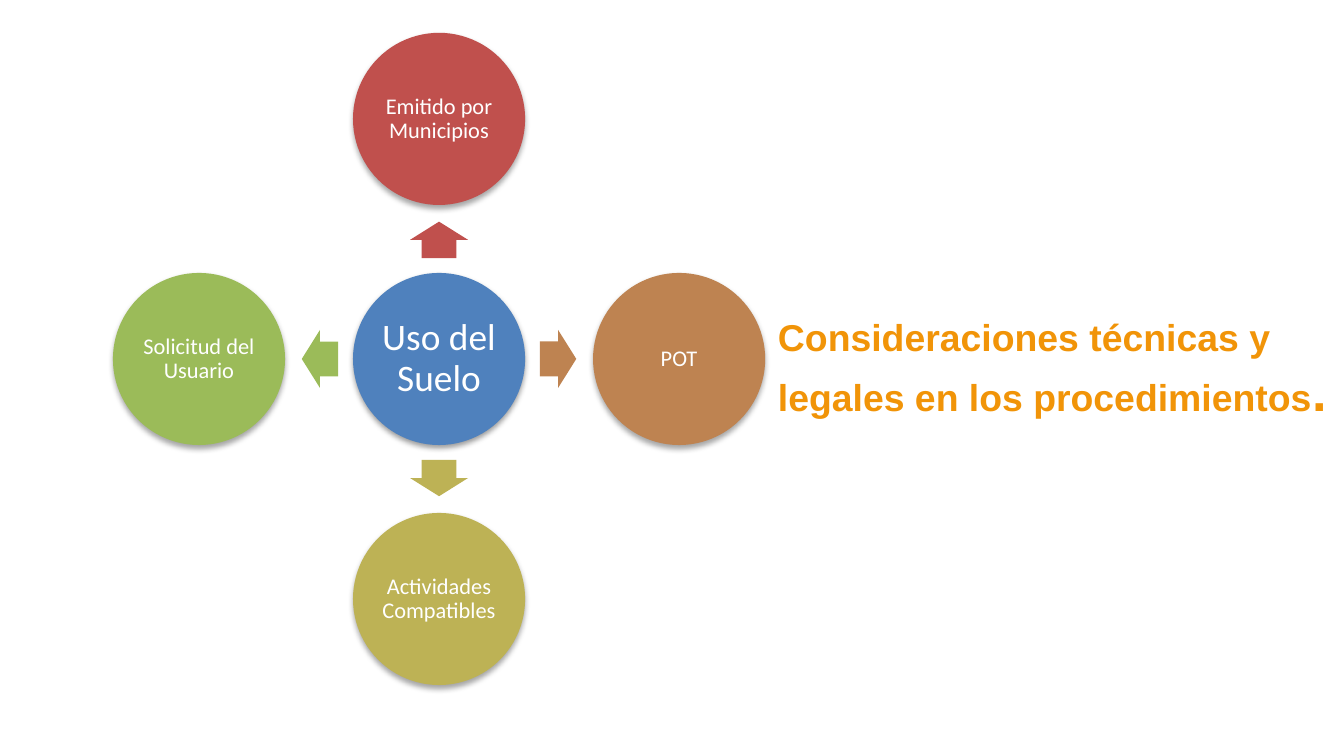
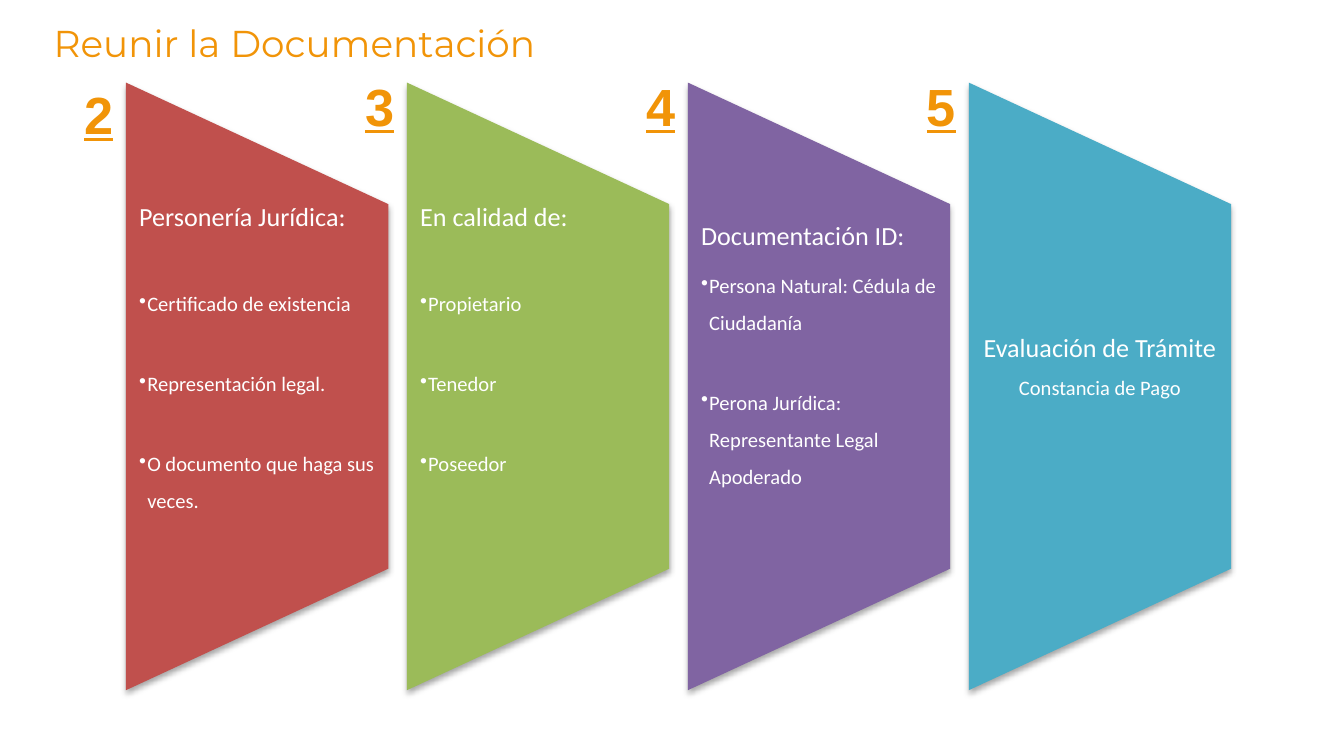
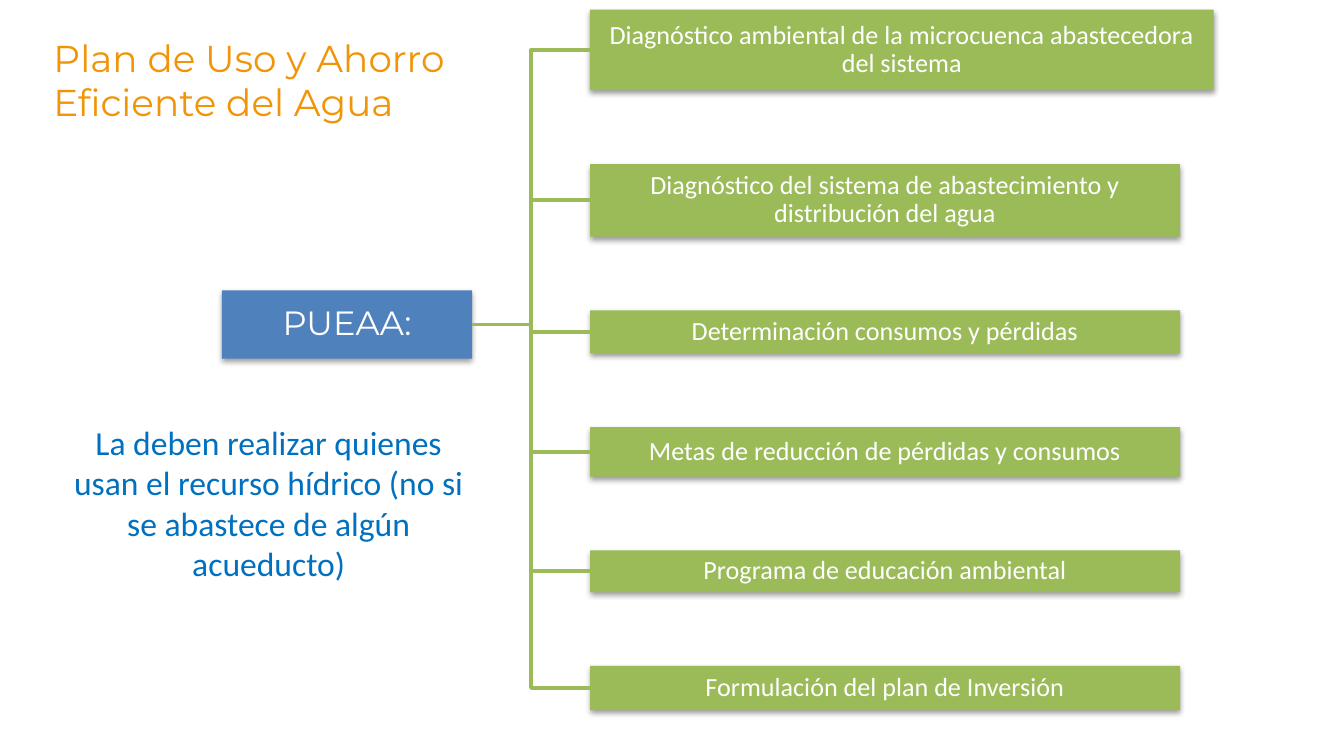
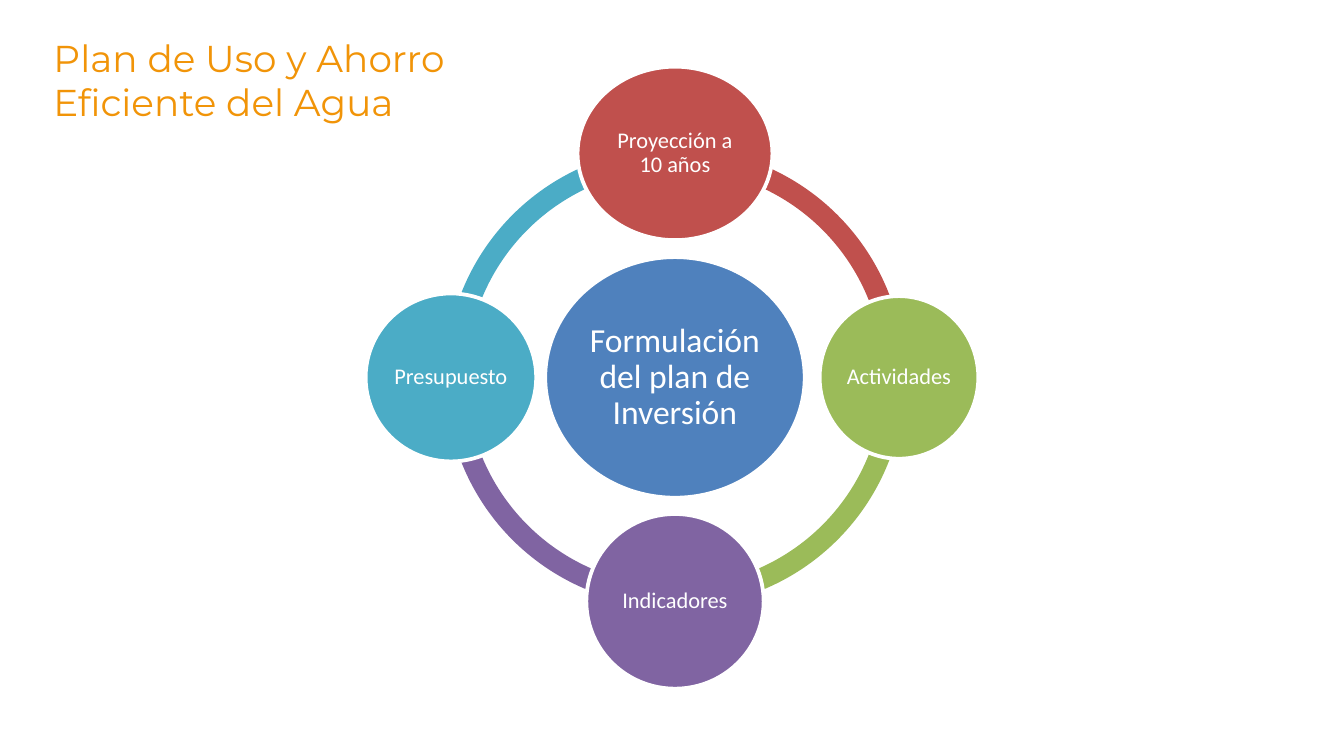
from dataclasses import dataclass
from typing import Any, NamedTuple, Optional

import lxml.etree
import pptx
import pptx.dml.color
import pptx.enum.shapes
import pptx.enum.text
import pptx.oxml.ns
import pptx.util

Pt = pptx.util.Pt
RGB = pptx.dml.color.RGBColor
MSO = pptx.enum.shapes.MSO_SHAPE
ALIGN = pptx.enum.text.PP_ALIGN
ANCHOR = pptx.enum.text.MSO_ANCHOR
qn = pptx.oxml.ns.qn

# Shared colours and fonts
WHITE = RGB(0xFF, 0xFF, 0xFF)
ORANGE = RGB(0xF1, 0x94, 0x08)
BLUE = RGB(0x4F, 0x81, 0xBD)
RED = RGB(0xC0, 0x50, 0x4D)
GREEN = RGB(0x9B, 0xBB, 0x59)
PURPLE = RGB(0x80, 0x64, 0xA2)
AQUA = RGB(0x4B, 0xAC, 0xC6)
BROWN = RGB(0xBE, 0x83, 0x51)
OLIVE = RGB(0xBD, 0xB2, 0x55)
NOTE_BLUE = RGB(0x00, 0x70, 0xC0)
BODY, HEADING, NUMBER = "Calibri", "Montserrat", "Arial"
PLAN_TITLE = "Plan de Uso y Ahorro Eficiente del Agua"


class Box(NamedTuple):
    x: float
    y: float
    w: float
    h: float


class Shadow(NamedTuple):
    alpha: int
    dist: float


class Direction(NamedTuple):
    dx: int
    dy: int
    angle: int


UP, RIGHT = Direction(0, -1, 270), Direction(1, 0, 0)
DOWN, LEFT = Direction(0, 1, 90), Direction(-1, 0, 180)
SOFT, DEEP = Shadow(38, 1.6), Shadow(35, 1.8)


@dataclass
class Run:
    text: str
    size: float
    color: RGB = WHITE
    font: str = BODY
    bold: bool = False
    underline: bool = False


@dataclass
class Para:
    runs: list[Run]
    align: Any = ALIGN.LEFT
    spacing: float = 1.0
    before: float = 0
    bullet: bool = False


@dataclass
class Satellite:
    text: str
    color: RGB
    way: Direction
    w: float
    h: float


@dataclass
class Panel:
    number: str
    number_top: float
    color: RGB
    paras: list[Para]
    centred: bool = False


class Branch(NamedTuple):
    text: str
    w: float
    h: float


# Drawing functions
def centred_box(cx: float, cy: float, w: float, h: float) -> Box:
    return Box(cx - w / 2, cy - h / 2, w, h)


def points(box: Box) -> list[int]:
    return [Pt(v) for v in box]


def write(tf: Any, paras: list[Para], **frame: Any) -> None:
    tf.word_wrap = True
    for name, value in frame.items():
        setattr(tf, name, value)
    for i, para in enumerate(paras):
        p = tf.paragraphs[0] if i == 0 else tf.add_paragraph()
        layout = {"alignment": para.align, "line_spacing": para.spacing,
                  "space_before": Pt(para.before)}
        for name, value in layout.items():
            setattr(p, name, value)
        if para.bullet:
            pPr = p._p.get_or_add_pPr()
            pPr.set("marL", str(Pt(4.3)))
            pPr.set("indent", str(Pt(-4.3)))
            lxml.etree.SubElement(pPr, qn("a:buChar")).set("char", "•")
        for run in para.runs:
            r = p.add_run()
            r.text = run.text
            style = {"size": Pt(run.size), "name": run.font,
                     "bold": run.bold, "underline": run.underline}
            for name, value in style.items():
                setattr(r.font, name, value)
            r.font.color.rgb = run.color


def margins(side: float, bottom: float = 0, top: float = 0) -> dict[str, Any]:
    return {"margin_left": Pt(side), "margin_right": Pt(side),
            "margin_top": Pt(top), "margin_bottom": Pt(bottom)}


def add_text(s: Any, box: Box, paras: list[Para], **frame: Any) -> None:
    write(s.shapes.add_textbox(*points(box)).text_frame, paras, **frame)


def add_heading(s: Any, box: Box, text: str) -> None:
    add_text(s, box, [Para([Run(text, 20, ORANGE, HEADING)])])


def add_shape(s: Any, kind: Any, box: Box, color: RGB, shadow: Optional[Shadow] = None,
              outlined: bool = False, rotation: float = 0, adj: tuple[float, ...] = ()) -> Any:
    sp = s.shapes.add_shape(kind, *points(box))
    sp.rotation = rotation
    sp.fill.solid()
    sp.fill.fore_color.rgb = color
    if outlined:
        sp.line.color.rgb = WHITE
        sp.line.width = Pt(2)
    else:
        sp.line.fill.background()
    for i, value in enumerate(adj):
        sp.adjustments[i] = value
    sp.shadow.inherit = False
    if shadow:
        effects = sp._element.spPr.find(qn("a:effectLst"))
        outer = lxml.etree.SubElement(effects, qn("a:outerShdw"))
        attrs = {"blurRad": Pt(3.1), "dist": Pt(shadow.dist), "dir": 5400000, "rotWithShape": 0}
        for name, value in attrs.items():
            outer.set(name, str(value))
        black = lxml.etree.SubElement(outer, qn("a:srgbClr"))
        black.set("val", "000000")
        lxml.etree.SubElement(black, qn("a:alpha")).set("val", str(shadow.alpha * 1000))
    return sp


def add_node(s: Any, kind: Any, box: Box, color: RGB, run: Run, **look: Any) -> Any:
    """A filled shape with its own centred label."""
    sp = add_shape(s, kind, box, color, **look)
    write(sp.text_frame, [Para([run], ALIGN.CENTER, 0.9)],
          vertical_anchor=ANCHOR.MIDDLE, **margins(1.5, 1.5, 1.5))
    return sp


def add_elbow(s: Any, start: Any, end: Any) -> None:
    c = s.shapes.add_connector(pptx.enum.shapes.MSO_CONNECTOR.ELBOW,
                               start.left + start.width, start.top + start.height // 2,
                               end.left, end.top + end.height // 2)
    c.begin_connect(start, 3)
    c.end_connect(end, 1)
    c.line.color.rgb = GREEN
    c.line.width = Pt(2)
    lxml.etree.SubElement(c._element.spPr, qn("a:effectLst"))


# Slide 1: land use hub
def land_use(s: Any) -> None:
    cx, cy, size, reach, arrow_reach = 235.2, 192.3, 92.2, 128.6, 63.8
    add_text(s, Box(409.7, 164.9, 310.3, 75.6), [Para([
        Run("Consideraciones técnicas y legales en los procedimientos", 20, ORANGE, NUMBER, True),
        Run(".", 28, ORANGE, NUMBER, True)])])
    add_node(s, MSO.OVAL, centred_box(cx, cy, size, size), BLUE,
             Run("Uso del Suelo", 20), shadow=SOFT)
    for sat in (
        Satellite("Emitido por Municipios", RED, UP, size, size),
        Satellite("POT", BROWN, RIGHT, size, size),
        Satellite("Actividades Compatibles", OLIVE, DOWN, size, size),
        Satellite("Solicitud del Usuario", GREEN, LEFT, size, size),
    ):
        dx, dy, angle = sat.way
        add_shape(s, MSO.RIGHT_ARROW,
                  centred_box(cx + dx * arrow_reach, cy + dy * arrow_reach, 19.5, 31.1),
                  sat.color, rotation=angle, adj=(0.6, 0.5))
        add_node(s, MSO.OVAL, centred_box(cx + dx * reach, cy + dy * reach, sat.w, sat.h),
                 sat.color, Run(sat.text, 12), shadow=DEEP)


# Slide 2: four numbered panels
def title_para(text: str, **layout: Any) -> Para:
    return Para([Run(text, 14)], **{"spacing": 0.9, **layout})


def bullets(first_gap: float, *texts: str) -> list[Para]:
    return [Para([Run(t, 11)], spacing=1.5, before=23 if i else first_gap, bullet=True)
            for i, t in enumerate(texts)]


def documentation(s: Any) -> None:
    left, pitch, width, height, middle = 67.5, 150.5, 140.5, 325.5, 207
    add_heading(s, Box(21.6, 7.2, 471.6, 35.3), "Reunir la Documentación")
    panels = (
        Panel("2", 40.3, RED, [
            title_para("Personería Jurídica:"),
            *bullets(25, "Certificado de existencia", "Representación legal.",
                     "O documento que haga sus veces.")]),
        Panel("3", 36, GREEN, [
            title_para("En calidad de:"),
            *bullets(25, "Propietario", "Tenedor", "Poseedor")]),
        Panel("4", 36, PURPLE, [
            title_para("Documentación ID:", spacing=1.5),
            *bullets(5, "Persona Natural: Cédula de Ciudadanía",
                     "Perona Jurídica: Representante Legal Apoderado")]),
        Panel("5", 36, AQUA, [
            title_para("Evaluación de Trámite", align=ALIGN.CENTER),
            Para([Run("Constancia de Pago", 11)], ALIGN.CENTER, 0.9, 8)], centred=True),
    )
    for i, panel in enumerate(panels):
        x = left + i * pitch
        add_shape(s, MSO.FLOWCHART_MANUAL_OPERATION,
                  centred_box(x + width / 2, middle, height, width),
                  panel.color, shadow=DEEP, rotation=270)
        add_text(s, Box(x, 109.4, width, 195.1), panel.paras,
                 vertical_anchor=ANCHOR.MIDDLE if panel.centred else ANCHOR.TOP,
                 **margins(7.2, 20 if panel.centred else 0))
        add_text(s, Box(x - 29.5, panel.number_top, 27.4, 23),
                 [Para([Run(panel.number, 28, ORANGE, NUMBER, True, True)])])


# Slide 3: content of the plan
def plan_tree(s: Any) -> None:
    x, y, gap = 316.1, 5.2, 39.5
    add_heading(s, Box(21.6, 15.1, 252, 74.2), PLAN_TITLE)
    root = add_node(s, MSO.RECTANGLE, Box(118.9, 155.5, 134, 36.7), BLUE,
                    Run("PUEAA:", 18, WHITE, HEADING), shadow=SOFT)
    for branch in (
        Branch("Diagnóstico ambiental de la microcuenca abastecedora del sistema", 334.1, 43.2),
        Branch("Diagnóstico del sistema de abastecimiento y distribución del agua", 316.1, 38.9),
        Branch("Determinación consumos y pérdidas", 316.1, 23),
        Branch("Metas de reducción de pérdidas y consumos", 316.1, 26.6),
        Branch("Programa de educación ambiental", 316.1, 22.3),
        Branch("Formulación del plan de Inversión", 316.1, 23.8),
    ):
        node = add_node(s, MSO.RECTANGLE, Box(x, y, branch.w, branch.h), GREEN,
                        Run(branch.text, 14), shadow=SOFT)
        add_elbow(s, root, node)
        y += branch.h + gap
    add_text(s, Box(32.4, 222.5, 223.2, 94.3), [Para([Run(
        "La deben realizar quienes usan el recurso hídrico (no si se abastece de algún acueducto)",
        18, NOTE_BLUE)], ALIGN.CENTER)])


# Slide 4: investment plan cycle
def investment_cycle(s: Any) -> None:
    cx, cy, reach, ring = 361.6, 202.2, 120, 246.2
    add_heading(s, Box(21.6, 15.1, 252, 74.2), PLAN_TITLE)
    satellites = (
        Satellite("Proyección a 10 años", RED, UP, 104.4, 92.9),
        Satellite("Actividades", GREEN, RIGHT, 85, 87.1),
        Satellite("Indicadores", PURPLE, DOWN, 95, 93.6),
        Satellite("Presupuesto", AQUA, LEFT, 91.4, 90),
    )
    for sat in satellites:
        start = sat.way.angle * 0.6
        end = (sat.way.angle + 90) % 360 * 0.6
        add_shape(s, MSO.BLOCK_ARC, centred_box(cx, cy, ring, ring), sat.color,
                  adj=(start, end, 0.046))
    add_node(s, MSO.OVAL, centred_box(cx, cy, 139, 128.9), BLUE,
             Run("Formulación del plan de Inversión", 18), outlined=True)
    for sat in satellites:
        add_node(s, MSO.OVAL,
                 centred_box(cx + sat.way.dx * reach, cy + sat.way.dy * reach, sat.w, sat.h),
                 sat.color, Run(sat.text, 12), outlined=True)


def main() -> None:
    prs = pptx.Presentation()
    prs.slide_width, prs.slide_height = Pt(720), Pt(405)
    for draw in (land_use, documentation, plan_tree, investment_cycle):
        draw(prs.slides.add_slide(prs.slide_layouts[6]))
    prs.save("out.pptx")


if __name__ == "__main__":
    main()
